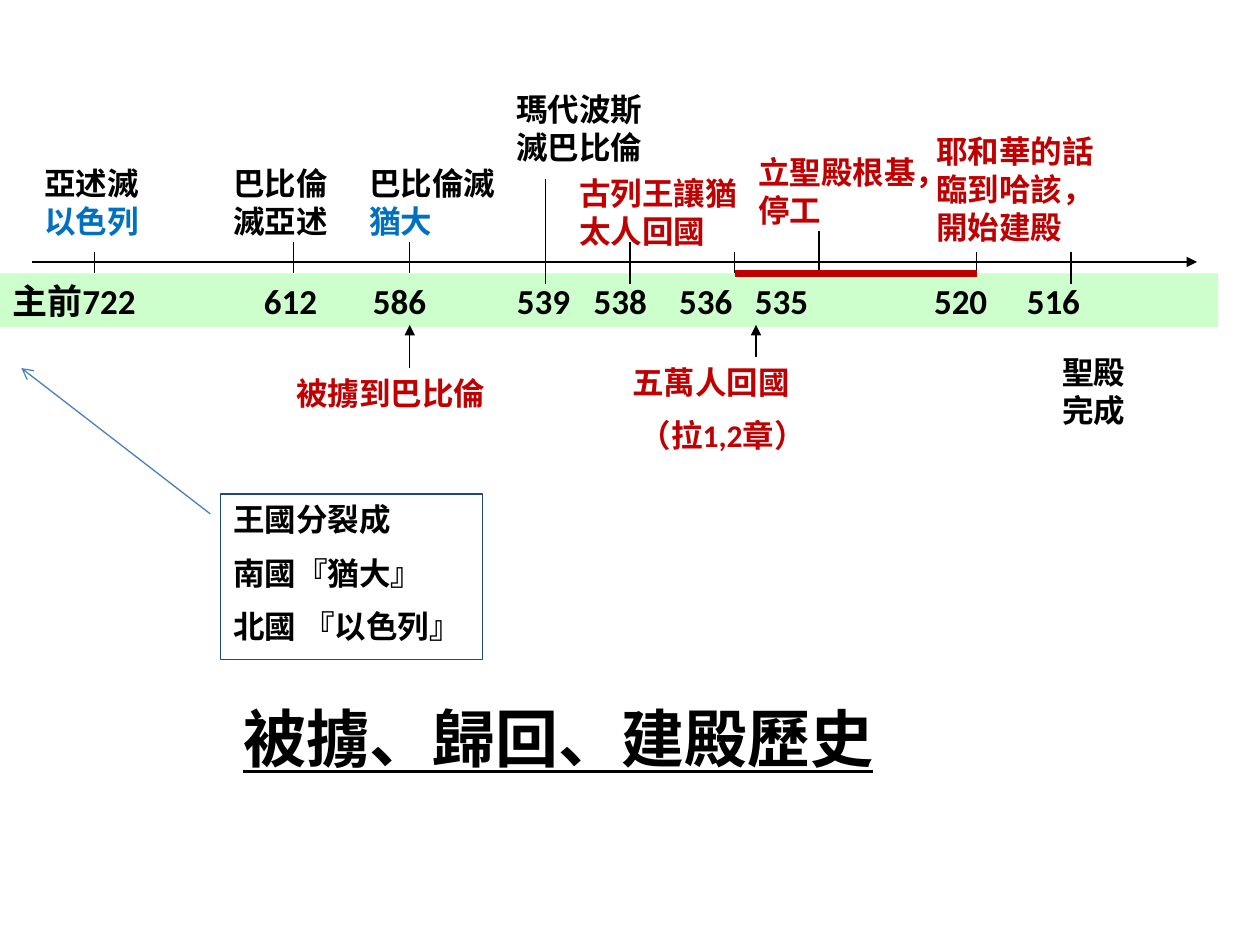
from dataclasses import dataclass

from lxml.etree import SubElement
from pptx import Presentation
from pptx.dml.color import RGBColor
from pptx.enum.shapes import MSO_CONNECTOR as Connector, MSO_SHAPE as Shape
from pptx.enum.text import MSO_ANCHOR as Anchor, MSO_AUTO_SIZE as AutoSize, PP_ALIGN as Align
from pptx.oxml.ns import qn
from pptx.util import Cm, Pt


@dataclass(frozen=True)
class Theme:
    font: str = "Calibri"
    black: str = "000000"
    red: str = "C00000"
    blue: str = "0070C0"
    band: str = "CCFFCC"
    pointer: str = "4B7EBC"
    border: str = "1F497D"
    title_size: int = 36
    year_size: int = 20
    label_size: int = 18
    thin: float = 0.75
    thick: float = 4.25


THEME = Theme()
BLACK, RED, BLUE = THEME.black, THEME.red, THEME.blue

TITLE = ((4.65, 13.97, 17.78, 1.8), [[("被擄、歸回、建殿歷史", BLACK)]])
LABELS = [
    ((0.64, 3.18, 2.97, 1.78), [[("亞述滅", BLACK), ("以色列", BLUE)]]),
    ((4.45, 3.18, 2.97, 1.78), [[("巴比倫滅亞述", BLACK)]]),
    ((7.19, 3.18, 3.18, 1.78), [[("巴比倫滅", BLACK), ("猶大", BLUE)]]),
    ((10.16, 1.7, 3.18, 1.78), [[("瑪代波斯滅巴比倫", BLACK)]]),
    ((11.43, 3.38, 3.81, 1.78), [[("古列王讓猶太人回國", RED)]]),
    ((15.04, 2.97, 3.81, 1.78), [[("立聖殿根基，停工", RED)]]),
    ((12.5, 7.19, 5.28, 2.16), [[("五萬人回國", RED)], [(" （拉1,2章）", RED)]]),
    ((18.62, 2.54, 3.81, 2.54), [[("耶和華的話臨到哈該，開始建殿", RED)]]),
    ((21.16, 6.99, 1.91, 1.78), [[("聖殿完成", BLACK)]]),
    ((5.72, 7.42, 5.28, 1.02), [[("被擄到巴比倫", RED)]]),
]
KINGDOMS = (
    (4.45, 9.96, 5.28, 3.33),
    [[("王國分裂成", BLACK)], [("南國『猶大』", BLACK)], [("北國 『以色列』", BLACK)]],
)

BAND_BOX = (0, 5.51, 24.56, 1.09)
FIRST_YEAR = "主前722"
YEAR_TABS = [
    ("612", 5.07), ("586", 7.27), ("539", 10.17), ("538", 11.72),
    ("536", 13.44), ("535", 14.97), ("520", 18.58), ("516", 20.45),
]

BAND_TOP, BELOW_TOP = 5.51, 5.72
TICKS = [
    (1.91, 5.08, BAND_TOP), (5.92, 4.88, BAND_TOP), (8.26, 4.88, BAND_TOP),
    (11, 3.61, BELOW_TOP), (12.7, 4.88, BELOW_TOP), (14.81, 5.08, BAND_TOP),
    (16.51, 4.65, BAND_TOP), (19.69, 5.08, BAND_TOP), (21.59, 5.08, BELOW_TOP),
]
ARROWS = [
    ((0.64, 5.28), (24.13, 5.28), BLACK, "triangle"),
    ((15.24, 7.19), (15.24, 6.55), BLACK, "triangle"),
    ((8.26, 7.42), (8.26, 6.55), BLACK, "triangle"),
    ((4.24, 10.36), (0.43, 7.42), THEME.pointer, "arrow"),
]
WORK_STOPPED = ((14.81, BAND_TOP), (19.69, BAND_TOP))


def color(value):
    return RGBColor.from_string(value)


def write(shape, paragraphs, size):
    frame = shape.text_frame
    frame.word_wrap = True
    frame.auto_size = AutoSize.SHAPE_TO_FIT_TEXT
    frame.vertical_anchor = Anchor.TOP
    for index, runs in enumerate(paragraphs):
        paragraph = frame.add_paragraph() if index else frame.paragraphs[0]
        paragraph.alignment = Align.LEFT
        if index:
            paragraph.space_before = Pt(size / 2)
        for text, run_color in runs:
            run = paragraph.add_run()
            run.text = text
            run.font.name = THEME.font
            run.font.size = Pt(size)
            run.font.bold = True
            run.font.color.rgb = color(run_color)


def add_text(slide, box, paragraphs, size=THEME.label_size):
    shape = slide.shapes.add_textbox(*map(Cm, box))
    write(shape, paragraphs, size)
    return shape


def add_box(slide, box, paragraphs, size, fill=None, border=None):
    shape = slide.shapes.add_shape(Shape.RECTANGLE, *map(Cm, box))
    shape.shadow.inherit = False
    if fill:
        shape.fill.solid()
        shape.fill.fore_color.rgb = color(fill)
    else:
        shape.fill.background()
    if border:
        shape.line.color.rgb = color(border)
        shape.line.width = Pt(THEME.thin)
    else:
        shape.line.fill.background()
    write(shape, paragraphs, size)
    return shape


def add_line(slide, start, end, line_color=BLACK, width=THEME.thin, head=None):
    line = slide.shapes.add_connector(Connector.STRAIGHT, *map(Cm, start + end))
    line.line.color.rgb = color(line_color)
    line.line.width = Pt(width)
    if head:
        SubElement(line.line._get_or_add_ln(), qn("a:tailEnd"), type=head)
    SubElement(line._element.spPr, qn("a:effectLst"))


def add_years(slide):
    text = "\t".join([FIRST_YEAR] + [year for year, _ in YEAR_TABS])
    band = add_box(slide, BAND_BOX, [[(text, BLACK)]], THEME.year_size, fill=THEME.band)
    properties = band.text_frame.paragraphs[0]._p.get_or_add_pPr()
    tabs = SubElement(properties, qn("a:tabLst"))
    for _, position in YEAR_TABS:
        SubElement(tabs, qn("a:tab"), pos=str(Cm(position)), algn="l")


def main():
    presentation = Presentation()
    presentation.slide_width, presentation.slide_height = Cm(25.4), Cm(19.05)
    slide = presentation.slides.add_slide(presentation.slide_layouts[6])

    title = add_text(slide, *TITLE, size=THEME.title_size)
    title.text_frame.paragraphs[0].runs[0].font.underline = True
    for box, paragraphs in LABELS:
        add_text(slide, box, paragraphs)
    add_years(slide)
    for x, top, bottom in TICKS:
        add_line(slide, (x, top), (x, bottom))
    add_line(slide, *WORK_STOPPED, line_color=RED, width=THEME.thick)
    for start, end, line_color, head in ARROWS:
        add_line(slide, start, end, line_color, head=head)
    add_box(slide, *KINGDOMS, size=THEME.label_size, border=THEME.border)

    presentation.save("out.pptx")


if __name__ == "__main__":
    main()
